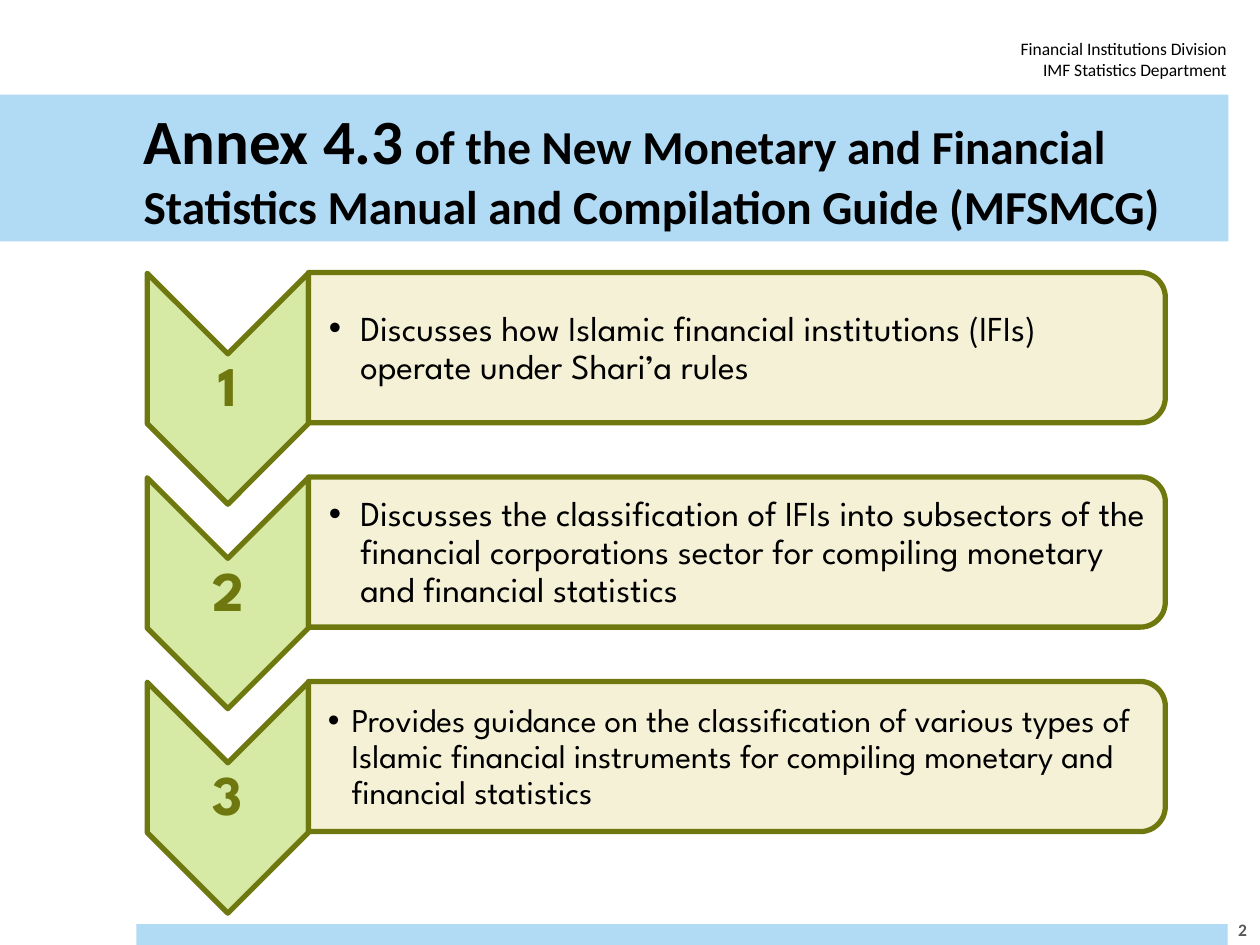
"""Build the slide on Annex 4.3 with three numbered chevron rows."""
from lxml.etree import SubElement
from pptx import Presentation
from pptx.dml.color import RGBColor
from pptx.enum.shapes import MSO_SHAPE
from pptx.enum.text import MSO_ANCHOR, MSO_AUTO_SIZE, PP_ALIGN
from pptx.oxml.ns import qn
from pptx.util import Pt

HUES = {"band": "B1DAF5", "ink": "000000", "gray": "595959",
        "leaf": "D6E9A5", "olive": "6E780E", "cream": "F5F1D7"}
ROWS = [
    ("Discusses how Islamic financial institutions (IFIs) operate under Shari’a rules", 20, 18, 11.5),
    ("Discusses the classification of IFIs into subsectors of the financial corporations "
     "sector for compiling monetary and financial statistics", 20, 18, 11.5),
    ("Provides guidance on the classification of various types of Islamic financial "
     "instruments for compiling monetary and financial statistics", 19, 13.5, 11),
]
STEP = 116.85


def set_text(shape, runs, hue, face, align, pads, bold=False):
    frame = shape.text_frame
    frame.word_wrap = True
    frame.auto_size = MSO_AUTO_SIZE.NONE
    frame.vertical_anchor = MSO_ANCHOR.MIDDLE
    (frame.margin_left, frame.margin_top,
     frame.margin_right, frame.margin_bottom) = [Pt(pad) for pad in pads]
    para = frame.paragraphs[0]
    para.alignment = align
    for index, (text, size) in enumerate(runs):
        if text.startswith("\n"):
            para.add_line_break()
        run = para.add_run()
        run.text = text.strip("\n")
        run.font.size = Pt(size)
        run.font.name = face
        run.font.bold = bold
        run.font.color.rgb = RGBColor.from_string(HUES[hue])
    return para


def add_form(kind, left, top, width, height, fill, line=None):
    form = slide.shapes.add_shape(kind, Pt(left), Pt(top), Pt(width), Pt(height))
    form.shadow.inherit = False
    form.fill.solid()
    form.fill.fore_color.rgb = RGBColor.from_string(HUES[fill])
    if line:
        form.line.color.rgb = RGBColor.from_string(HUES[line])
        form.line.width = Pt(3)
    else:
        form.line.fill.background()
    return form


deck = Presentation()
deck.slide_width, deck.slide_height = Pt(720), Pt(540)
slide = deck.slides.add_slide(deck.slide_layouts[5])

add_form(MSO_SHAPE.RECTANGLE, 78, 528, 623.5, 12, "band")
head = slide.shapes.add_textbox(Pt(534), Pt(18), Pt(174), Pt(31.5))
set_text(head, [("Financial Institutions Division", 10), ("\nIMF Statistics Department", 10)],
         "ink", "Calibri", PP_ALIGN.RIGHT, (7.2, 3.6, 7.2, 3.6))

title = slide.shapes.title
title.left, title.top, title.width, title.height = Pt(0), Pt(54), Pt(702), Pt(84)
title.fill.solid()
title.fill.fore_color.rgb = RGBColor.from_string(HUES["band"])
set_text(title, [("Annex 4.3", 36),
                 (" of the New Monetary and Financial Statistics Manual "
                  "and Compilation Guide (MFSMCG)", 27)],
         "ink", "Calibri", PP_ALIGN.LEFT, (82, 3, 21.6, 3), True)

page = slide.shapes.add_textbox(Pt(692), Pt(516), Pt(36), Pt(30))
set_text(page, [("2", 10)], "gray", "Calibri", PP_ALIGN.CENTER, (7.2, 3.6, 7.2, 3.6), True)

for row, (words, size, hang, pad) in enumerate(ROWS):
    down = row * STEP
    arrow = add_form(MSO_SHAPE.CHEVRON, 64.2, 176 + down, 132, 92.2, "leaf", "olive")
    arrow.rotation = 90
    label = slide.shapes.add_textbox(Pt(84.2), Pt(202.2 + down), Pt(92.2), Pt(39.6))
    para = set_text(label, [(str(row + 1), 32)], "olive", "League Spartan",
                    PP_ALIGN.CENTER, (1.4, 1.4, 1.4, 1.4), True)
    para.line_spacing = 0.9

    panel = add_form(MSO_SHAPE.ROUND_2_SAME_RECTANGLE, 378.2, -46.2 + down, 85.8, 489.6,
                     "cream", "olive")
    panel.rotation = 90
    note = slide.shapes.add_textbox(Pt(176.4), Pt(160.4 + down), Pt(485.3), Pt(77.8))
    para = set_text(note, [(words, size)], "ink", "League Spartan",
                    PP_ALIGN.LEFT, (pad, 0.9, 0.9, 0.9))
    para.line_spacing = 0.9
    props = para._p.get_or_add_pPr()
    props.set("marL", str(Pt(hang)))
    props.set("indent", str(-Pt(hang)))
    SubElement(props, qn("a:buFont"), typeface="Arial")
    SubElement(props, qn("a:buChar"), char="•")

deck.save("out.pptx")
